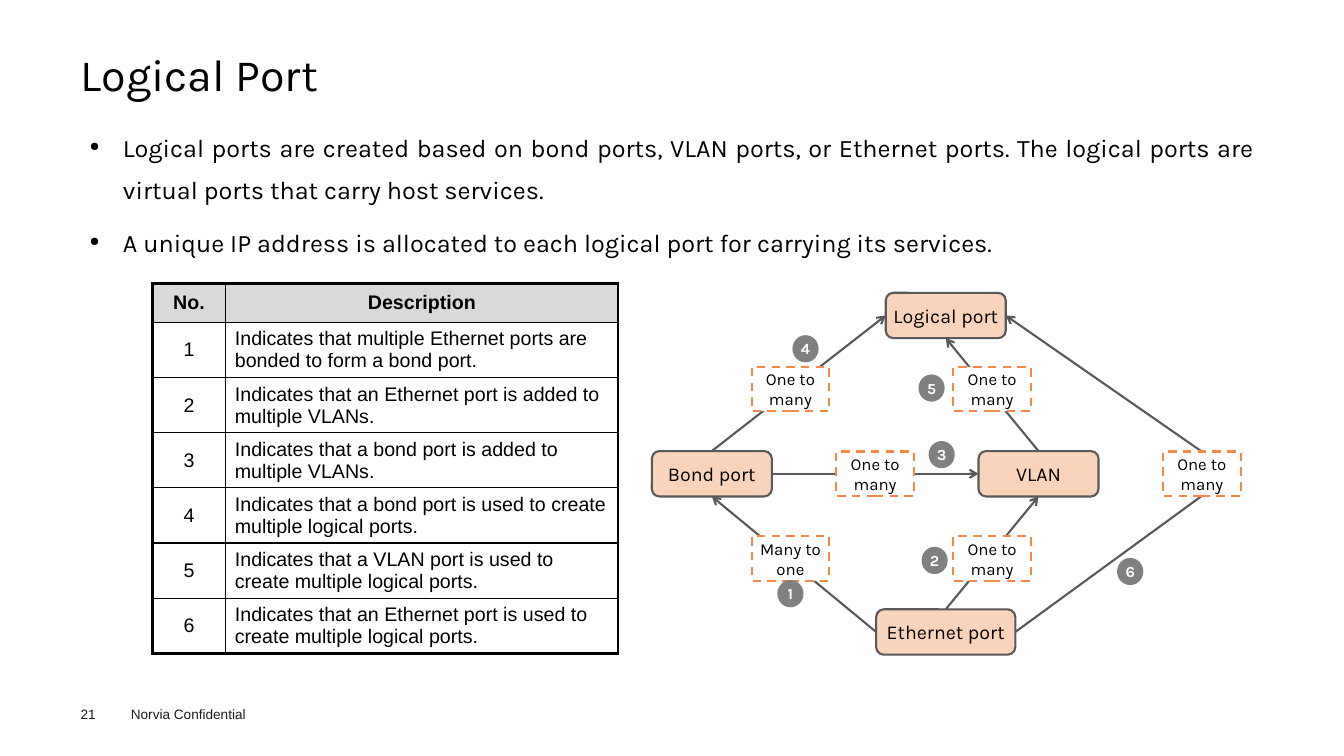
from lxml import etree
from pptx import Presentation
from pptx.dml.color import RGBColor
from pptx.enum.dml import MSO_LINE
from pptx.enum.shapes import MSO_CONNECTOR, MSO_SHAPE
from pptx.enum.text import MSO_ANCHOR, PP_ALIGN
from pptx.oxml.ns import qn
from pptx.util import Inches, Pt

STRAIGHT = MSO_CONNECTOR.STRAIGHT
DASH = MSO_LINE.DASH
ELLIPSE, RECTANGLE, ROUNDED = MSO_SHAPE.OVAL, MSO_SHAPE.RECTANGLE, MSO_SHAPE.ROUNDED_RECTANGLE
TOP, MIDDLE = MSO_ANCHOR.TOP, MSO_ANCHOR.MIDDLE
LEFT, CENTER, JUSTIFY = PP_ALIGN.LEFT, PP_ALIGN.CENTER, PP_ALIGN.JUSTIFY
TOP_SIDE, LEFT_SIDE, BOTTOM_SIDE, RIGHT_SIDE = range(4)

COLORS = {
    "black": "000000", "white": "FFFFFF", "footer": "1D1D1B", "header": "D9D9D9",
    "badge": "808080", "node": "FAD3BB", "link": "595959", "dash": "F28944",
}
COLORS = {name: RGBColor.from_string(value) for name, value in COLORS.items()}


def write(frame, texts, size, face="Karla", color="black", bold=False,
          align=LEFT, anchor=TOP, insets=(0, 0)):
    across, down = (Inches(inset) for inset in insets)
    settings = {"word_wrap": True, "vertical_anchor": anchor, "margin_left": across,
                "margin_right": across, "margin_top": down, "margin_bottom": down}
    for name, value in settings.items():
        setattr(frame, name, value)
    for index, text in enumerate(texts):
        para = frame.add_paragraph() if index else frame.paragraphs[0]
        para.alignment = align
        span = para.add_run()
        span.text = text
        for name, value in {"name": face, "size": Pt(size), "bold": bold}.items():
            setattr(span.font, name, value)
        span.font.color.rgb = COLORS[color]


def add_box(kind, center, size, text, fill, outline, text_format):
    width, height = size
    box = page.shapes.add_shape(kind, Inches(center[0] - width / 2), Inches(center[1] - height / 2),
                                Inches(width), Inches(height))
    box.shadow.inherit = False
    box.fill.solid()
    box.fill.fore_color.rgb = COLORS[fill]
    if outline:
        box.line.color.rgb = COLORS[outline]
        box.line.width = Pt(1.5)
    else:
        box.line.fill.background()
    write(box.text_frame, [text], align=CENTER, anchor=MIDDLE, insets=(0.02, 0.02), **text_format)
    return box


deck = Presentation()
deck.slide_width, deck.slide_height = Inches(13.33), Inches(7.5)
page = deck.slides.add_slide(deck.slide_layouts[5])

MARGIN, CONTENT_WIDTH = 0.8, 11.73

title = page.shapes.title
title.left, title.top = Inches(MARGIN), Inches(0.49)
title.width, title.height = Inches(CONTENT_WIDTH), Inches(0.54)
write(title.text_frame, ["Logical Port"], 32, anchor=MIDDLE)
title.text_frame.paragraphs[0].line_spacing = 0.9

body = page.shapes.add_textbox(Inches(MARGIN), Inches(1.15), Inches(CONTENT_WIDTH), Inches(1.6))
write(body.text_frame, [
    "Logical ports are created based on bond ports, VLAN ports, or Ethernet ports. "
    "The logical ports are virtual ports that carry host services.",
    "A unique IP address is allocated to each logical port for carrying its services.",
], 18, align=JUSTIFY, insets=(0.09, 0.04))
for index, para in enumerate(body.text_frame.paragraphs):
    para.line_spacing = 1.4
    para.space_before = Pt(7.9 if index else 0)
    properties = para._p.get_or_add_pPr()
    properties.set("marL", str(Inches(0.33)))
    properties.set("indent", str(-Inches(0.33)))
    etree.SubElement(properties, qn("a:buSzPct"), val="50000")
    etree.SubElement(properties, qn("a:buChar"), char="●")

footers = [("21", MARGIN, 7, 0.3, (0, 0)),
           ("Norvia Confidential", 1.2, 6.95, 1.6, (0.1, 0.05))]
for text, left, top, width, insets in footers:
    footer = page.shapes.add_textbox(Inches(left), Inches(top), Inches(width), Inches(0.27))
    write(footer.text_frame, [text], 9.7, face="Arial", color="footer", insets=insets)

descriptions = [
    "Indicates that multiple Ethernet ports are bonded to form a bond port.",
    "Indicates that an Ethernet port is added to multiple VLANs.",
    "Indicates that a bond port is added to multiple VLANs.",
    "Indicates that a bond port is used to create multiple logical ports.",
    "Indicates that a VLAN port is used to create multiple logical ports.",
    "Indicates that an Ethernet port is used to create multiple logical ports.",
]
entries = [("No.", "Description")] + [(str(n), text) for n, text in enumerate(descriptions, 1)]
last_row = len(entries) - 1
table = page.shapes.add_table(len(entries), 2, Inches(1.51), Inches(2.81),
                              Inches(4.62), Inches(3.63)).table
table.first_row = table.horz_banding = False
for column, width in zip(table.columns, (0.73, 3.89)):
    column.width = Inches(width)
for row, entry in enumerate(entries):
    table.rows[row].height = Inches(0.54 if row else 0.39)
    for column, text in enumerate(entry):
        cell = table.cell(row, column)
        cell.fill.solid()
        cell.fill.fore_color.rgb = COLORS["white" if row else "header"]
        write(cell.text_frame, [text], 14, face="Arial", bold=row == 0,
              align=LEFT if row and column else CENTER)
        cell.vertical_anchor = MIDDLE
        cell.margin_left = cell.margin_right = Inches(0.09)
        cell.margin_top = cell.margin_bottom = Inches(0.04)
        edges = {"lnL": column == 0, "lnR": column == 1, "lnT": row == 0, "lnB": row == last_row}
        for place, (edge, outer) in enumerate(edges.items()):
            border = etree.Element(qn("a:" + edge), w=str(Pt(2.25 if outer else 1)))
            paint = etree.SubElement(border, qn("a:solidFill"))
            etree.SubElement(paint, qn("a:srgbClr"), val=str(COLORS["black"]))
            cell._tc.get_or_add_tcPr().insert(place, border)

UPPER, CENTRAL, LOWER = (3.13 + 1.57 * level for level in range(3))
UPPER_LABEL, LOWER_LABEL = CENTRAL - 0.84, CENTRAL + 0.84
BOND, LABEL, CENTRAL_LABEL, HUB, RIGHT_LABEL, VLAN, ETHERNET_LABEL = (
    7.06, 7.84, 8.68, 9.38, 9.84, 10.3, 11.92)

nodes = {}
for text, center, width in [("Logical port", (HUB, UPPER), 1.19), ("Bond port", (BOND, CENTRAL), 1.19),
                            ("VLAN", (VLAN, CENTRAL), 1.19), ("Ethernet port", (HUB, LOWER), 1.38)]:
    nodes[text] = add_box(ROUNDED, center, (width, 0.45), text, "node", "link", {"size": 14})

labels = [("One to many", ETHERNET_LABEL, CENTRAL), ("Many to one", LABEL, LOWER_LABEL),
          ("One to many", LABEL, UPPER_LABEL), ("One to many", CENTRAL_LABEL, CENTRAL),
          ("One to many", RIGHT_LABEL, UPPER_LABEL), ("One to many", RIGHT_LABEL, LOWER_LABEL)]
label_boxes = []
for text, x, y in labels:
    label = add_box(RECTANGLE, (x, y), (0.77, 0.44), text, "white", "dash", {"size": 12})
    label.line.dash_style = DASH
    label_boxes.append(label)
nodes["Ethernet label"] = label_boxes[0]

links = [
    ("Bond port", RIGHT_SIDE, "VLAN", LEFT_SIDE),
    ("Bond port", TOP_SIDE, "Logical port", LEFT_SIDE),
    ("Ethernet label", TOP_SIDE, "Logical port", RIGHT_SIDE),
    ("VLAN", TOP_SIDE, "Logical port", BOTTOM_SIDE),
    ("Ethernet port", LEFT_SIDE, "Bond port", BOTTOM_SIDE),
    ("Ethernet port", TOP_SIDE, "VLAN", BOTTOM_SIDE),
    ("Ethernet port", RIGHT_SIDE, "Ethernet label", BOTTOM_SIDE),
]
for source, source_side, target, target_side in links:
    link = page.shapes.add_connector(STRAIGHT, 0, 0, 0, 0)
    link.begin_connect(nodes[source], source_side)
    link.end_connect(nodes[target], target_side)
    link.line.color.rgb = COLORS["link"]
    link.line.width = Pt(1.5)
    if target != "Ethernet label":
        etree.SubElement(link.line._get_or_add_ln(), qn("a:tailEnd"), type="arrow")
    etree.SubElement(link._element.spPr, qn("a:effectLst"))
    label_boxes[0]._element.addprevious(link._element)

badges = [(LABEL, 5.89), (9.27, 5.56), (9.34, 4.51), (7.99, 3.46), (9.24, 3.85), (11.21, 5.67)]
for number, center in enumerate(badges, 1):
    add_box(ELLIPSE, center, (0.26, 0.27), str(number), "badge", None,
            {"size": 11, "color": "white", "bold": True})

deck.save("out.pptx")
